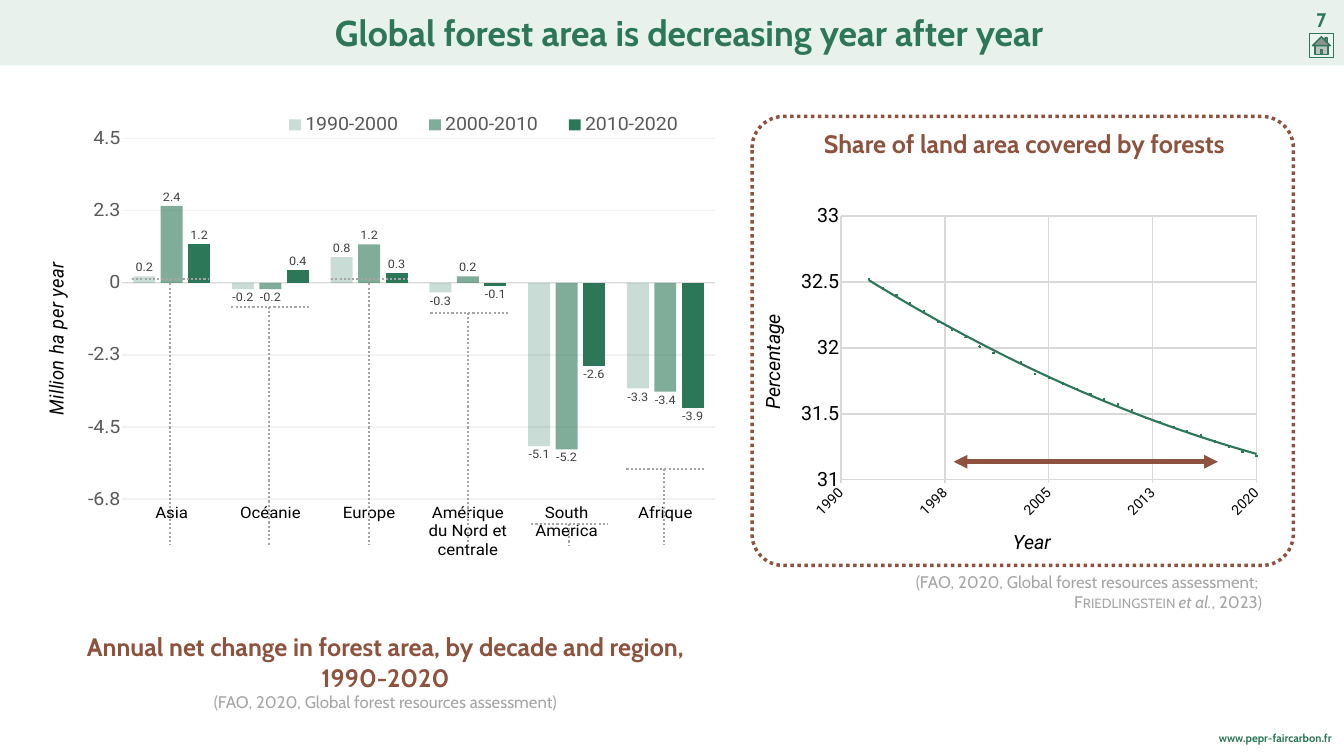
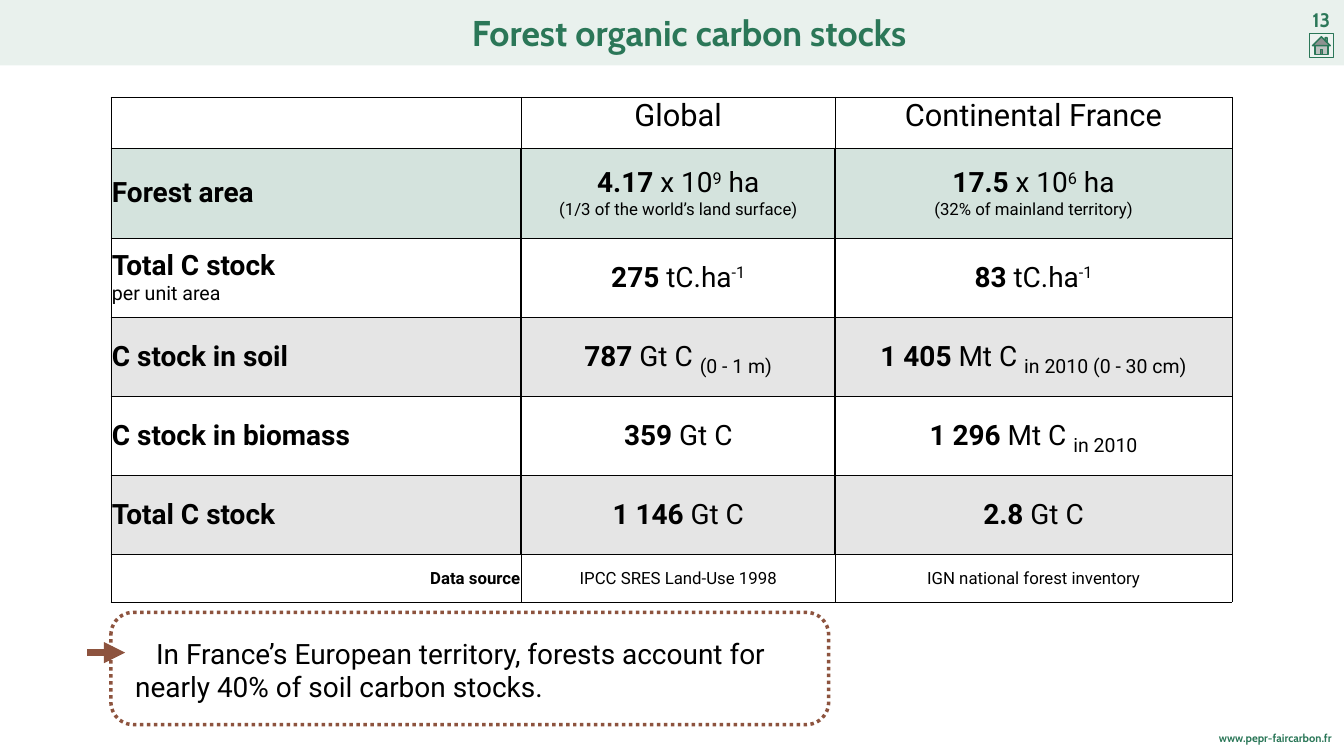
from lxml import etree
from pptx import Presentation
from pptx.chart.data import CategoryChartData, XyChartData
from pptx.dml.color import RGBColor
from pptx.enum.chart import (XL_CHART_TYPE, XL_LABEL_POSITION, XL_LEGEND_POSITION,
                             XL_MARKER_STYLE, XL_TICK_LABEL_POSITION, XL_TICK_MARK)
from pptx.enum.dml import MSO_LINE
from pptx.enum.shapes import MSO_CONNECTOR, MSO_SHAPE
from pptx.enum.text import MSO_ANCHOR, PP_ALIGN
from pptx.oxml import parse_xml
from pptx.oxml.ns import nsdecls, qn
from pptx.util import Cm, Pt

GREEN = RGBColor(0x2B, 0x77, 0x58)
BROWN = RGBColor(0x8D, 0x53, 0x3E)
BLACK = RGBColor(0, 0, 0)
WHITE = RGBColor(0xFF, 0xFF, 0xFF)
SOURCE_GREY = RGBColor(0xA6, 0xA6, 0xA6)
BRACKET_GREY = RGBColor(0xA5, 0xA5, 0xA5)
AXIS_GREY = RGBColor(0xD9, 0xD9, 0xD9)
GRID_GREY = RGBColor(0xF2, 0xF2, 0xF2)
LEGEND_GREY = RGBColor(0x59, 0x59, 0x59)
LABEL_GREY = RGBColor(0x40, 0x40, 0x40)
CABIN, ROBOTO = "Cabin", "Roboto"
LEFT, CENTER, RIGHT = PP_ALIGN.LEFT, PP_ALIGN.CENTER, PP_ALIGN.RIGHT
DOTTED = MSO_LINE.ROUND_DOT
NO_TICK, TICK_OUT = XL_TICK_MARK.NONE, XL_TICK_MARK.OUTSIDE

# Home icon parts: corners in cm from the icon's top left, opacity of the black fill
HOME_PARTS = [
    ([(0.79, 0.35), (0.79, 0.2), (0.89, 0.2), (0.89, 0.44)], 20),
    ([(0.28, 0.6), (0.94, 0.6), (0.94, 1.04), (0.28, 1.04)], 20),
    ([(0.6, 0.15), (1.05, 0.6), (0.15, 0.6)], 40),
    ([(0.55, 0.81), (0.65, 0.81), (0.65, 1.04), (0.55, 1.04)], 40),
]


def fade(element, opacity):
    """Make every colour inside the element partly transparent."""
    for colour in element.iter(qn("a:srgbClr")):
        etree.SubElement(colour, qn("a:alpha"), val=str(opacity * 1000))


def set_font(font, size=None, colour=None, name=None, **flags):
    if size:
        font.size = Pt(size)
    if colour is not None:
        font.color.rgb = colour
    if name:
        font.name = name
    for flag, value in flags.items():
        setattr(font, flag, value)


def add_run(paragraph, text, size=None, bold=None, italic=None, base=0, small=False):
    run = paragraph.add_run()
    run.text = text
    set_font(run.font, size, bold=bold, italic=italic)
    properties = run.font._element
    if base:
        properties.set("baseline", str(base * 1000))
    if small:
        properties.set("cap", "small")


def place(layout_parent, index, x, y, width, height, inner=False):
    """Give a chart part a manual layout in fractions of the chart."""
    for old in layout_parent.findall(qn("c:layout")):
        layout_parent.remove(old)
    target = '<c:layoutTarget val="inner"/>' if inner else ""
    layout_parent.insert(index, parse_xml(
        f'<c:layout {nsdecls("c")}><c:manualLayout>{target}'
        '<c:xMode val="edge"/><c:yMode val="edge"/>'
        f'<c:x val="{x}"/><c:y val="{y}"/><c:w val="{width}"/><c:h val="{height}"/>'
        '</c:manualLayout></c:layout>'))


class Deck:
    def __init__(self):
        self.presentation = Presentation()
        self.presentation.slide_width = Cm(67.73)
        self.presentation.slide_height = Cm(38.1)
        self.slide = None

    def new_slide(self, title, number):
        self.slide = self.presentation.slides.add_slide(self.presentation.slide_layouts[5])
        # Header band and home icon
        band = self.shape(MSO_SHAPE.RECTANGLE, 0, 0, 67.73, 3.3, fill=GREEN, opacity=10)
        self.shape(MSO_SHAPE.RECTANGLE, 65.99, 1.7, 1.2, 1.2, WHITE, 20, GREEN, 2)
        for corners, opacity in HOME_PARTS:
            points = [(Cm(65.99 + x), Cm(1.7 + y)) for x, y in corners]
            builder = self.slide.shapes.build_freeform(*points[0])
            builder.add_line_segments(points[1:])
            self.paint(builder.convert_to_shape(), BLACK, opacity, GREEN, 2)
        # Footer, page number and title
        self.text(60.81, 36.75, 6.43, 1.6, [("www.pepr-faircarbon.fr", 16, GREEN, True)], RIGHT)
        self.text(65.89, 0.28, 1.4, 1.45, [(number, 28, GREEN, True)], wrap=False)
        heading = self.slide.shapes.title
        band.element.addnext(heading.element)
        heading.left, heading.top, heading.width, heading.height = map(Cm, (5.28, 0.56, 58.9, 2.39))
        self.fill_frame(heading.text_frame, [(title, 51.1, GREEN, True)], CENTER, 0.16)
        heading.text_frame.vertical_anchor = MSO_ANCHOR.MIDDLE
        heading.text_frame.paragraphs[0].line_spacing = 0.9

    def paint(self, shape, fill=None, opacity=100, line=None, line_width=1, dash=None):
        shape.shadow.inherit = False
        if fill is None:
            shape.fill.background()
        else:
            shape.fill.solid()
            shape.fill.fore_color.rgb = fill
            fade(shape.element.spPr, opacity)
        if line is None:
            shape.line.fill.background()
        else:
            shape.line.color.rgb = line
            shape.line.width = Pt(line_width)
            shape.line.dash_style = dash
        return shape

    def shape(self, kind, left, top, width, height, *paint_options, **paint_names):
        shape = self.slide.shapes.add_shape(kind, Cm(left), Cm(top), Cm(width), Cm(height))
        return self.paint(shape, *paint_options, **paint_names)

    def dotted_frame(self, left, top, width, height, rounding):
        frame = self.shape(MSO_SHAPE.ROUNDED_RECTANGLE, left, top, width, height,
                           line=BROWN, line_width=5, dash=DOTTED)
        frame.adjustments[0] = rounding

    def fill_frame(self, frame, paragraphs, align, margin, name=CABIN):
        """Each paragraph is text or a list of runs, then size, colour and bold."""
        frame.margin_left = frame.margin_right = Cm(margin)
        frame.margin_top = frame.margin_bottom = Cm(margin)
        for index, (content, size, colour, bold) in enumerate(paragraphs):
            paragraph = frame.add_paragraph() if index else frame.paragraphs[0]
            paragraph.alignment = align
            set_font(paragraph.font, size, colour, name, bold=bold)
            for text, style in [(content, {})] if isinstance(content, str) else content:
                if text == "\n":
                    paragraph.add_line_break()
                else:
                    add_run(paragraph, text, **style)

    def text(self, left, top, width, height, paragraphs, align=CENTER, margin=0.13,
             name=CABIN, wrap=True):
        frame = self.slide.shapes.add_textbox(Cm(left), Cm(top), Cm(width), Cm(height)).text_frame
        frame.word_wrap = wrap
        self.fill_frame(frame, paragraphs, align, margin, name)
        return frame

    def line(self, x1, y1, x2, y2, colour, width, dash=None, arrows=()):
        line = self.slide.shapes.add_connector(MSO_CONNECTOR.STRAIGHT, Cm(x1), Cm(y1), Cm(x2), Cm(y2))
        line.line.color.rgb = colour
        line.line.width = Pt(width)
        line.line.dash_style = dash
        for end in arrows:
            etree.SubElement(line.line._get_or_add_ln(), qn(f"a:{end}"), type="triangle")
        etree.SubElement(line.element.spPr, qn("a:effectLst"))

    def chart(self, kind, left, top, width, height, data, plot_box):
        chart = self.slide.shapes.add_chart(kind, Cm(left), Cm(top), Cm(width), Cm(height), data).chart
        chart.has_title = chart.has_legend = False
        set_font(chart.font, 10, BLACK, "Arial")
        chart.plots[0].vary_by_categories = False
        place(chart._chartSpace.chart.plotArea, 0, *plot_box, inner=True)
        return chart

    def axis(self, axis, size, colour, number_format, title=None, line=None, grid=None,
             scale=None, tick=NO_TICK, rotation=None):
        axis.major_tick_mark, axis.minor_tick_mark = tick, NO_TICK
        labels = axis.tick_labels
        set_font(labels.font, size, colour, ROBOTO)
        labels.number_format, labels.number_format_is_linked = number_format, False
        if rotation:
            axis._element.find(qn("c:txPr")).find(qn("a:bodyPr")).set("rot", str(rotation * 60000))
        if scale:
            axis.minimum_scale, axis.maximum_scale, axis.major_unit = scale
        if title:
            frame = axis.axis_title.text_frame
            frame.text = title
            set_font(frame.paragraphs[0].runs[0].font, 28, BLACK, ROBOTO, italic=True, bold=False)
        axis.has_major_gridlines = grid is not None
        if grid is not None:
            axis.major_gridlines.format.line.color.rgb = grid
            axis.major_gridlines.format.line.width = Pt(2)
        if line is None:
            axis.format.line.fill.background()
        else:
            axis.format.line.color.rgb, axis.format.line.width = line[0], Pt(line[1])

    def table(self, left, top, widths, heights, rows, fills):
        table = self.slide.shapes.add_table(len(rows), len(widths), Cm(left), Cm(top),
                                            Cm(sum(widths)), Cm(sum(heights))).table
        table.first_row = table.horz_banding = False
        for column, width in zip(table.columns, widths):
            column.width = Cm(width)
        last_row, last_column = len(rows) - 1, len(widths) - 1
        for r, (row, height) in enumerate(zip(rows, heights)):
            table.rows[r].height = Cm(height)
            for c, paragraphs in enumerate(row):
                cell = table.cell(r, c)
                align = CENTER if c else RIGHT if r == last_row else LEFT
                cell.vertical_anchor = MSO_ANCHOR.MIDDLE if r else MSO_ANCHOR.TOP
                cell.margin_left = cell.margin_right = cell.margin_top = cell.margin_bottom = Cm(0.05)
                frame = cell.text_frame
                self.fill_frame(frame, [(content, size, BLACK, bold) for content, size, bold in paragraphs],
                                align, 0.05, ROBOTO)
                properties = cell._tc.get_or_add_tcPr()
                if r in fills:
                    cell.fill.solid()
                    cell.fill.fore_color.rgb, opacity = fills[r]
                    fade(properties, opacity)
                else:
                    cell.fill.background()
                # Inner vertical borders are thicker in the body rows
                body = 0 < r < last_row
                borders = {"L": body and c > 0, "R": body and c < last_column, "T": False, "B": False}
                for index, (side, thick) in enumerate(borders.items()):
                    properties.insert(index, parse_xml(
                        f'<a:ln{side} {nsdecls("a")} w="{Pt(3 if thick else 1)}"><a:solidFill>'
                        f'<a:srgbClr val="{BLACK}"/></a:solidFill></a:ln{side}>'))


def forest_area_slide(deck):
    deck.new_slide("Global forest area is decreasing year after year", "7")
    citation = [("(FAO, 2020, Global forest resources assessment; ", {}), ("\n", {}),
                ("Friedlingstein ", {"small": True}), ("et al.", {"italic": True}), (", 2023)", {})]
    deck.text(39.24, 28.68, 24.49, 2.31, [(citation, 24, SOURCE_GREY, False)], RIGHT)

    # Share of land area, with its trend
    shares = [32.52, 32.45, 32.4, 32.34, 32.28, 32.2, 32.14, 32.08, 32.01, 31.96,
              31.93, 31.89, 31.8, 31.77, 31.73, 31.69, 31.65, 31.61, 31.57, 31.53,
              31.47, 31.44, 31.4, 31.37, 31.34, 31.29, 31.25, 31.21, 31.18]
    data = XyChartData()
    points = data.add_series("Series 1")
    for year, share in enumerate(shares, start=1992):
        points.add_data_point(year, share)
    chart = deck.chart(XL_CHART_TYPE.XY_SCATTER, 37.95, 10.03, 26.24, 18.19, data,
                       (0.169, 0.047, 0.798, 0.731))
    deck.axis(chart.category_axis, 20, BLACK, "0", "Year", (AXIS_GREY, 2), AXIS_GREY,
              (1990, 2020, 7.5), TICK_OUT, -45)
    deck.axis(chart.value_axis, 28, BLACK, "0.####", "Percentage", None, AXIS_GREY, (31, 33, 0.5))
    series = chart.plots[0].series[0]
    series.format.line.fill.background()
    series.marker.style, series.marker.size = XL_MARKER_STYLE.CIRCLE, 2
    series.marker.format.fill.solid()
    series.marker.format.fill.fore_color.rgb = GREEN
    series.marker.format.line.color.rgb = GREEN
    series._element.find(qn("c:xVal")).addprevious(parse_xml(
        f'<c:trendline {nsdecls("c", "a")}><c:spPr><a:ln w="{Pt(3)}"><a:solidFill>'
        f'<a:srgbClr val="{GREEN}"/></a:solidFill></a:ln></c:spPr>'
        '<c:trendlineType val="poly"/><c:order val="2"/>'
        '<c:dispRSqr val="0"/><c:dispEq val="0"/></c:trendline>'))
    deck.text(38.23, 6.32, 26.77, 3.3, [("Share of land area covered by forests", 36, BROWN, True)])
    deck.dotted_frame(37.9, 5.87, 27.28, 22.63, 0.07)

    # Net change by region
    data = CategoryChartData()
    data.categories = ["Asia", "Océanie", "Europe", "Amérique du Nord et centrale",
                       "South America", "Afrique"]
    data.add_series("1990-2000", [0.2, -0.2, 0.8, -0.3, -5.1, -3.3])
    data.add_series("2000-2010", [2.4, -0.2, 1.2, 0.2, -5.2, -3.4])
    data.add_series("2010-2020", [1.2, 0.4, 0.3, -0.1, -2.6, -3.9])
    chart = deck.chart(XL_CHART_TYPE.COLUMN_CLUSTERED, 1.96, 5.44, 34.47, 22.76, data,
                       (0.122, 0.073, 0.866, 0.853))
    deck.axis(chart.category_axis, 24, BLACK, "General", line=(AXIS_GREY, 1))
    chart.category_axis.tick_label_position = XL_TICK_LABEL_POSITION.LOW
    deck.axis(chart.value_axis, 28, LEGEND_GREY, "0.#", "Million ha per year", None, GRID_GREY,
              (-6.75, 4.5, 2.25))
    plot = chart.plots[0]
    plot.gap_width, plot.overlap = 100, -25
    for series, opacity in zip(plot.series, (25, 60, 100)):
        series.invert_if_negative = False
        series.format.fill.solid()
        series.format.fill.fore_color.rgb = GREEN
        fade(series._element.find(qn("c:spPr")), opacity)
        labels = series.data_labels
        labels.show_value, labels.position = True, XL_LABEL_POSITION.OUTSIDE_END
        labels.number_format, labels.number_format_is_linked = "0.#", False
        set_font(labels.font, 18, LABEL_GREY, ROBOTO)
    chart.has_legend = True
    legend = chart.legend
    legend.position, legend.include_in_layout = XL_LEGEND_POSITION.TOP, True
    set_font(legend.font, 28, LEGEND_GREY, ROBOTO)
    place(legend._element, 1, 0.33, 0.01, 0.64, 0.06)
    deck.text(2.67, 31.7, 33.5, 4.32, [
        ("Annual net change in forest area, by decade and region, 1990-2020", 36, BROWN, True),
        ("(FAO, 2020, Global forest resources assessment)", 24, SOURCE_GREY, False)])

    # Period arrow and region brackets
    deck.line(48.06, 23.27, 61.37, 23.27, BROWN, 6.5, arrows=("headEnd", "tailEnd"))
    for left, top in [(6.65, 14.07), (11.66, 15.47), (16.69, 14.07),
                      (21.69, 15.77), (26.77, 26.39), (31.57, 23.62)]:
        deck.line(left, top, left + 3.89, top, BRACKET_GREY, 3, DOTTED)
        deck.line(left + 1.9, top, left + 1.9, 27.48, BRACKET_GREY, 3, DOTTED)


def amount(value, unit, raised="", after="", lowered=""):
    """A bold figure with its unit, exponent and lowered remark."""
    runs = [(value, {"bold": True}), (unit, {}), (raised, {"base": 30}), (after, {}),
            (lowered, {"size": 48, "base": -20})]
    return [run for run in runs if run[0]], 40, None


def carbon_stock_slide(deck):
    deck.new_slide("Forest organic carbon stocks", "13")
    rows = [
        [[], [("Global", 44, False)], [("Continental France", 44, False)]],
        [[("Forest area", 40, True)],
         [amount("4.17 ", "x 10", "9", " ha"), ("(1/3 of the world’s land surface)", 24, False)],
         [amount("17.5", " x 10", "6", " ha"), ("(32% of mainland territory)", 24, False)]],
        [[("Total C stock", 40, True), ("per unit area", 28, False)],
         [amount("275", " tC.ha", "-1")], [amount("83", " tC.ha", "-1")]],
        [[("C stock in soil", 40, True)], [amount("787", " Gt C ", lowered="(0 - 1 m)")],
         [amount("1 405", " Mt C ", lowered="in 2010 (0 - 30 cm)")]],
        [[("C stock in biomass", 40, True)], [amount("359 ", "Gt C")],
         [amount("1 296", " Mt C ", lowered="in 2010")]],
        [[("Total C stock", 40, True)], [amount("1 146", " Gt C")], [amount("2.8", " Gt C")]],
        [[("Data source", 24, True)], [("IPCC SRES Land-Use 1998", 24, False)],
         [("IGN national forest inventory", 24, False)]],
    ]
    deck.table(5.59, 4.9, [20.68, 15.82, 19.99], [2.59, 4.5] + [3.99] * 4 + [2.39], rows,
               {1: (GREEN, 20), 3: (BLACK, 10), 5: (BLACK, 10)})

    # Key message
    deck.dotted_frame(5.59, 30.86, 36.17, 5.66, 0.2)
    message = "In France’s European territory, forests account for nearly 40% of soil carbon stocks."
    frame = deck.text(6.02, 31.27, 35.33, 4.98, [(message, 40, BLACK, False)], LEFT, 0.79, ROBOTO)
    frame.paragraphs[0]._p.get_or_add_pPr().set("indent", str(Cm(1.06)))
    deck.line(6.3, 32.89, 4.39, 32.89, BROWN, 10, arrows=("headEnd",))


def main():
    deck = Deck()
    forest_area_slide(deck)
    carbon_stock_slide(deck)
    deck.presentation.save("out.pptx")


if __name__ == "__main__":
    main()
